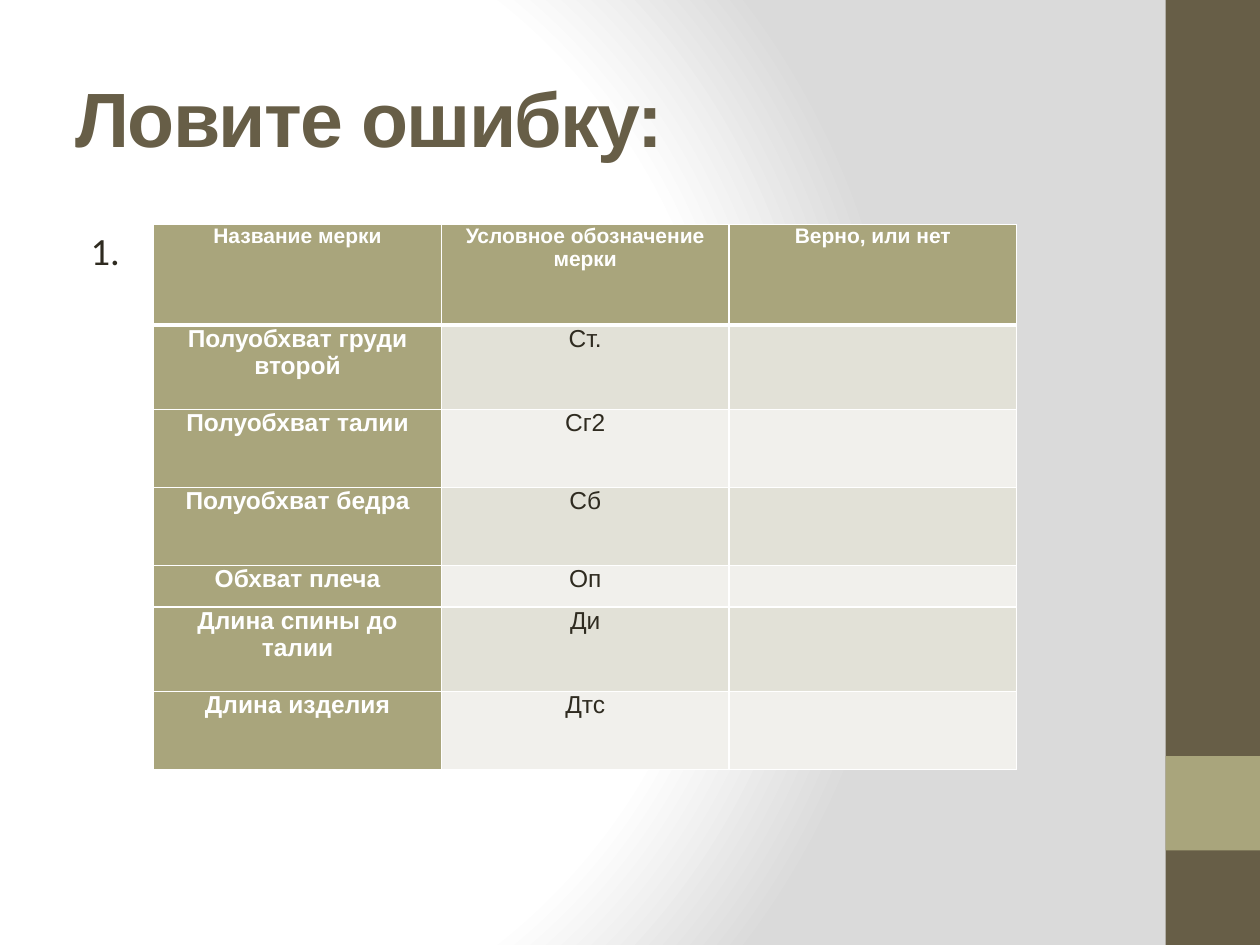
from lxml.etree import SubElement
from pptx import Presentation
from pptx.dml.color import RGBColor
from pptx.enum.shapes import MSO_SHAPE as Shape
from pptx.enum.text import MSO_ANCHOR as Anchor, PP_ALIGN as Align
from pptx.oxml import parse_xml
from pptx.oxml.ns import nsdecls, qn
from pptx.util import Inches, Pt

BROWN = RGBColor(0x67, 0x5E, 0x47)
OLIVE = RGBColor(0xA9, 0xA5, 0x7C)
INK = RGBColor(0x2F, 0x2B, 0x20)
WHITE = RGBColor(0xFF, 0xFF, 0xFF)
GREY = RGBColor(0xDA, 0xDA, 0xDA)
BANDS = (RGBColor(0xE2, 0xE1, 0xD7), RGBColor(0xF1, 0xF0, 0xEC))

HEADINGS = ("Название мерки", "Условное обозначение мерки", "Верно, или нет")
MEASUREMENTS = (
    ("Полуобхват груди второй", "Ст.", ""),
    ("Полуобхват талии", "Сг2", ""),
    ("Полуобхват бедра", "Сб", ""),
    ("Обхват плеча", "Оп", ""),
    ("Длина спины до талии", "Ди", ""),
    ("Длина изделия", "Дтс", ""),
)
ROW_HEIGHTS = (0.8, 0.67, 0.62, 0.62, 0.33, 0.67, 0.62)


def write(frame, text, size, color, font="Arial", bold=False, align=Align.LEFT):
    paragraph = frame.paragraphs[0]
    paragraph.alignment = align
    run = paragraph.add_run()
    run.text = text
    run.font.name = font
    run.font.size = Pt(size)
    run.font.bold = bold
    run.font.color.rgb = color
    return paragraph


def place(part, left, top, width, height):
    part.left, part.top = Inches(left), Inches(top)
    part.width, part.height = Inches(width), Inches(height)


def paint_background(slide):
    slide.background.fill.solid()
    properties = slide.element.find(".//" + qn("p:bgPr"))
    stops = "".join(
        f'<a:gs pos="{position * 1000}"><a:srgbClr val="{color}"/></a:gs>'
        for position, color in ((0, WHITE), (75, WHITE), (100, GREY)))
    gradient = parse_xml(
        f'<a:gradFill {nsdecls("a")} rotWithShape="1"><a:gsLst>{stops}</a:gsLst>'
        '<a:path path="circle"><a:fillToRect l="20000" t="50000" r="100000" b="50000"/>'
        '</a:path></a:gradFill>')
    properties.replace(properties.find(qn("a:solidFill")), gradient)


def add_sidebar(slide, left, top, width, height):
    for color, offset, length in ((BROWN, 0, height), (OLIVE, 6, width)):
        band = slide.shapes.add_shape(
            Shape.RECTANGLE, Inches(left), Inches(top + offset),
            Inches(width), Inches(length))
        band.shadow.inherit = False
        band.fill.solid()
        band.fill.fore_color.rgb = color
        band.line.fill.background()


def fill_title(slide, *box):
    title = slide.shapes.title
    place(title, *box)
    title.text_frame.vertical_anchor = Anchor.MIDDLE
    heading = write(title.text_frame, "Ловите ошибку:", 44, BROWN, bold=True)
    heading.runs[0].font._element.set("spc", "-100")


def fill_body(slide, *box):
    body = slide.placeholders[1]
    place(body, *box)
    body.text_frame.vertical_anchor = Anchor.TOP
    number = write(body.text_frame, "1.", 22, INK, font="Calibri")
    number.space_before = Pt(4.4)
    properties = number._p.get_or_add_pPr()
    properties.set("marL", str(Inches(0.12)))
    properties.set("indent", "0")
    SubElement(properties, qn("a:buNone"))


def draw_borders(cell, **widths):
    properties = cell._tc.get_or_add_tcPr()
    for side in "LRTB":
        width = Pt(widths.get(side, 1))
        properties.append(parse_xml(
            f'<a:ln{side} {nsdecls("a")} w="{width}"><a:solidFill>'
            f'<a:srgbClr val="{WHITE}"/></a:solidFill></a:ln{side}>'))


def add_measurements(slide, left, top, width, height):
    records = (HEADINGS,) + MEASUREMENTS
    table = slide.shapes.add_table(
        len(records), len(HEADINGS), Inches(left), Inches(top),
        Inches(width), Inches(height)).table
    for column in table.columns:
        column.width = Inches(width / len(HEADINGS))
    for r, (record, row_height) in enumerate(zip(records, ROW_HEIGHTS)):
        table.rows[r].height = Inches(row_height)
        for c, text in enumerate(record):
            cell = table.cell(r, c)
            cell.margin_left = cell.margin_right = Inches(0.07)
            cell.margin_top = cell.margin_bottom = 0
            draw_borders(cell, T=3 if r == 1 else 1, B=3 if r == 0 else 1)
            is_heading = r == 0 or c == 0
            cell.fill.solid()
            cell.fill.fore_color.rgb = OLIVE if is_heading else BANDS[(r - 1) % 2]
            if text:
                write(cell.text_frame, text, 12 if r == 0 else 14,
                      WHITE if is_heading else INK,
                      bold=is_heading, align=Align.CENTER)


def main():
    deck = Presentation()
    deck.slide_width, deck.slide_height = Inches(10), Inches(7.5)
    slide = deck.slides.add_slide(deck.slide_layouts[1])
    paint_background(slide)
    add_sidebar(slide, 9.25, 0, 0.75, 7.5)
    fill_title(slide, 0.5, 0.3, 8.33, 1.25)
    fill_body(slide, 0.5, 1.75, 8.33, 5.25)
    add_measurements(slide, 1.22, 1.78, 6.85, 4.33)
    deck.save("out.pptx")


if __name__ == "__main__":
    main()
